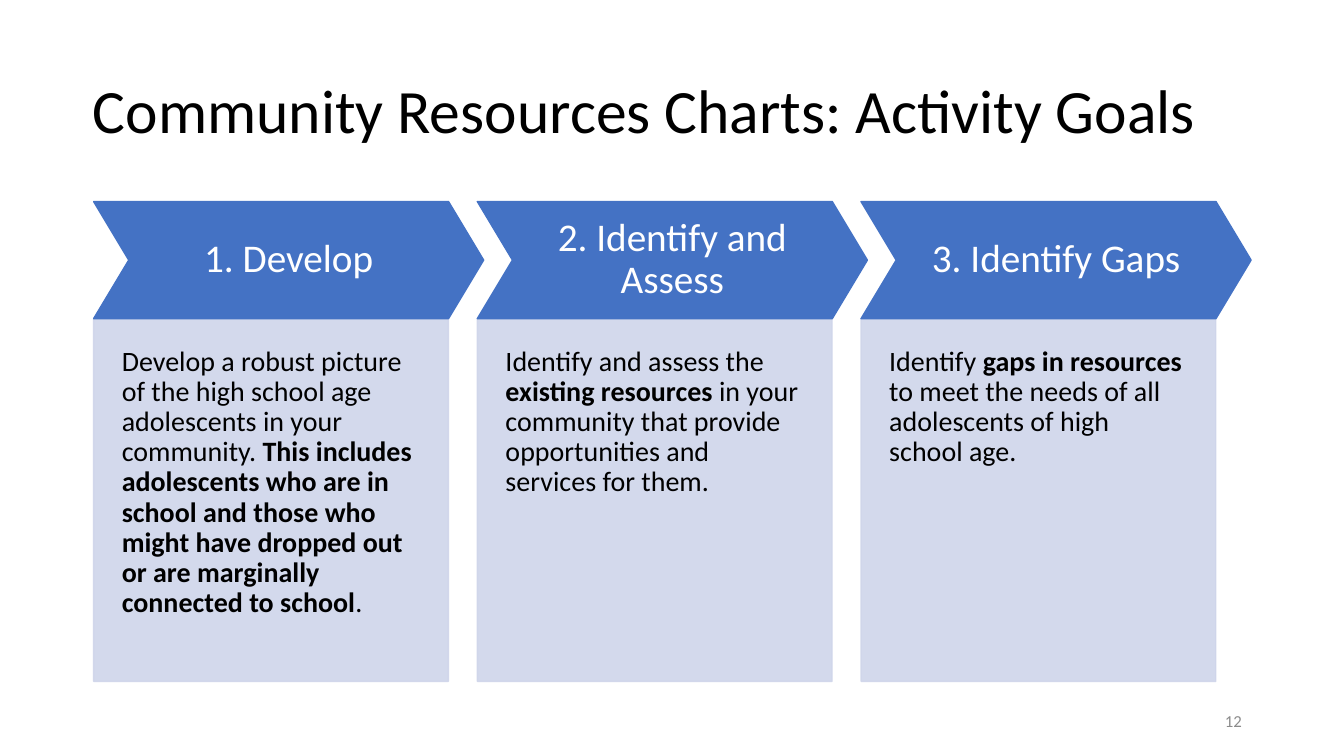
from lxml import etree
from pptx import Presentation
from pptx.dml.color import RGBColor
from pptx.enum import shapes, text
from pptx.oxml import ns
from pptx.util import Cm, Pt

BLUE, PALE, BLACK, WHITE, GREY = "4472C4", "CFD5EA", "000000", "FFFFFF", "8C8C8C"
LEFT, PITCH = 2.36, 9.67
HEAD_TOP, HEAD_WIDTH, HEAD_HEIGHT = 5.08, 9.83, 2.95
BODY_WIDTH, BODY_HEIGHT = 8.94, 9.14

# Heading, then (text, bold) runs
GOALS = [
    ("1. Develop", [
        ("Develop a robust picture of the high school age adolescents in your community. ", False),
        ("This includes adolescents who are in school and those who might have dropped out "
         "or are marginally connected to school", True),
        (".", False)]),
    ("2. Identify and Assess", [
        ("Identify and assess the ", False),
        ("existing resources ", True),
        ("in your community that provide opportunities and services for them.", False)]),
    ("3. Identify Gaps", [
        ("Identify ", False),
        ("gaps in resources ", True),
        ("to meet the needs of all adolescents of high school age.", False)]),
]


def set_all(obj, values):
    for name, value in values.items():
        setattr(obj, name, value)


def set_color(color_format, value):
    color_format.rgb = RGBColor.from_string(value)


def write(sp, runs, size, color, align, anchor, insets, spacing=0.9):
    """Fill one paragraph; insets are left, top, right, bottom in cm."""
    tf = sp.text_frame
    sides = ("margin_left", "margin_top", "margin_right", "margin_bottom")
    set_all(tf, dict(zip(sides, map(Cm, insets))))
    set_all(tf, {"word_wrap": True, "vertical_anchor": anchor,
                 "auto_size": text.MSO_AUTO_SIZE.NONE})
    p = tf.paragraphs[0]
    set_all(p, {"alignment": align, "line_spacing": spacing})
    for words, bold in runs:
        r = p.add_run()
        r.text = words
        set_all(r.font, {"name": "Calibri", "size": Pt(size), "bold": bold})
        set_color(r.font.color, color)


def add_panel(slide, kind, box, color, opacity=100):
    sp = slide.shapes.add_shape(kind, *map(Cm, box))
    sp.shadow.inherit = False
    sp.fill.solid()
    set_color(sp.fill.fore_color, color)
    set_color(sp.line.color, color)
    sp.line.width = Pt(1)
    if opacity < 100:
        for clr in sp.fill._xPr.iter(ns.qn("a:srgbClr")):
            etree.SubElement(clr, ns.qn("a:alpha"), val=str(opacity * 1000))
    return sp


def add_goal(slide, left, heading, runs):
    body = add_panel(slide, shapes.MSO_SHAPE.RECTANGLE,
                     (left, HEAD_TOP + HEAD_HEIGHT, BODY_WIDTH, BODY_HEIGHT), PALE, 90)
    write(body, runs, 20, BLACK, text.PP_ALIGN.LEFT, text.MSO_ANCHOR.TOP,
          (0.71, 0.71, 0.71, 1.42))
    head = add_panel(slide, shapes.MSO_SHAPE.CHEVRON,
                     (left, HEAD_TOP, HEAD_WIDTH, HEAD_HEIGHT), BLUE)
    head.adjustments[0] = 0.3
    write(head, [(heading, False)], 28, WHITE, text.PP_ALIGN.CENTER,
          text.MSO_ANCHOR.MIDDLE, (0.36,) * 4)


def add_title(slide, words):
    sp = slide.shapes.title
    set_all(sp, {"left": Cm(2.34), "top": Cm(1.02), "width": Cm(29.21), "height": Cm(3.68)})
    write(sp, [(words, False)], 44, BLACK, text.PP_ALIGN.LEFT,
          text.MSO_ANCHOR.MIDDLE, (0, 0.13, 0.25, 0.13))


def add_page_number(slide, number):
    sp = slide.shapes.add_textbox(Cm(23.93), Cm(17.65), Cm(7.62), Cm(1.02))
    write(sp, [(number, False)], 12, GREY, text.PP_ALIGN.RIGHT,
          text.MSO_ANCHOR.MIDDLE, (0.25, 0.13, 0.25, 0.13), 1.0)


def main():
    prs = Presentation()
    set_all(prs, {"slide_width": Cm(33.87), "slide_height": Cm(19.05)})
    slide = prs.slides.add_slide(prs.slide_layouts[5])
    add_title(slide, "Community Resources Charts: Activity Goals")
    for i, (heading, runs) in enumerate(GOALS):
        add_goal(slide, LEFT + i * PITCH, heading, runs)
    add_page_number(slide, "12")
    prs.save("out.pptx")


if __name__ == "__main__":
    main()
